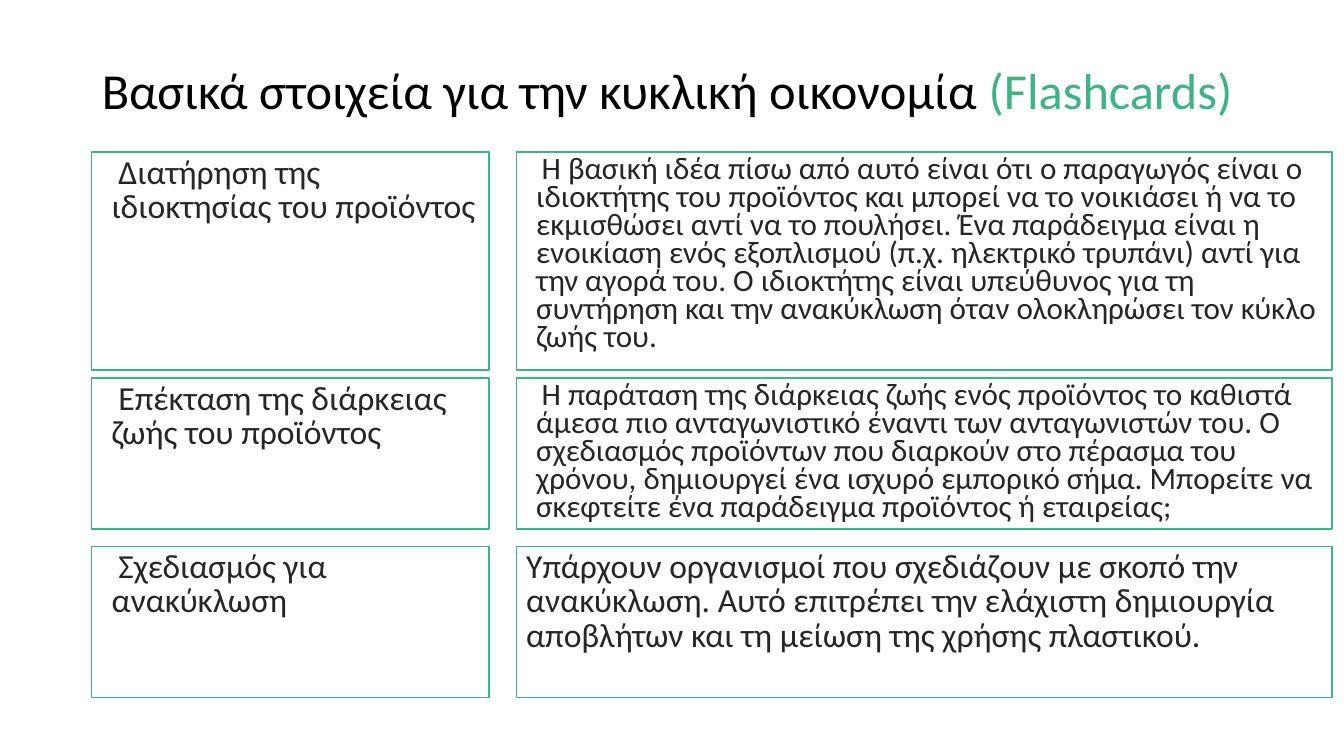
from lxml.etree import SubElement
from pptx import Presentation
from pptx.dml.color import RGBColor
from pptx.enum.shapes import MSO_SHAPE
from pptx.enum.text import MSO_ANCHOR, MSO_AUTO_SIZE, PP_ALIGN
from pptx.oxml.ns import qn
from pptx.util import Inches, Pt

GREEN, BLACK, WHITE, INK = "40B385", "000000", "FFFFFF", "262626"
LEFT = 0.91

# top, height, term, meaning, meaning size, meaning spacing, meaning indented
CARDS = [
    (1.51, 2.16, "Διατήρηση της ιδιοκτησίας του προϊόντος",
     "Η βασική ιδέα πίσω από αυτό είναι ότι ο παραγωγός είναι ο ιδιοκτήτης του "
     "προϊόντος και μπορεί να το νοικιάσει ή να το εκμισθώσει αντί να το πουλήσει. "
     "Ένα παράδειγμα είναι η ενοικίαση ενός εξοπλισμού (π.χ. ηλεκτρικό τρυπάνι) "
     "αντί για την αγορά του. Ο ιδιοκτήτης είναι υπεύθυνος για τη συντήρηση και "
     "την ανακύκλωση όταν ολοκληρώσει τον κύκλο ζωής του.", 22.2, 0.75, True),
    (3.75, 1.5, "Επέκταση της διάρκειας ζωής του προϊόντος",
     "Η παράταση της διάρκειας ζωής ενός προϊόντος το καθιστά άμεσα πιο "
     "ανταγωνιστικό έναντι των ανταγωνιστών του. Ο σχεδιασμός προϊόντων που "
     "διαρκούν στο πέρασμα του χρόνου, δημιουργεί ένα ισχυρό εμπορικό σήμα. "
     "Μπορείτε να σκεφτείτε ένα παράδειγμα προϊόντος ή εταιρείας;", 22.2, 0.75, True),
    (5.42, 1.5, "Σχεδιασμός για ανακύκλωση",
     "Υπάρχουν οργανισμοί που σχεδιάζουν με σκοπό την ανακύκλωση. Αυτό επιτρέπει "
     "την ελάχιστη δημιουργία αποβλήτων και τη μείωση της χρήσης πλαστικού.",
     24, 0.85, False),
]


def color(value):
    return RGBColor.from_string(value)


def indent(par):
    """Hang the paragraph on a blank bullet."""
    props = par._p.get_or_add_pPr()
    props.set("marL", str(Inches(0.1)))
    props.set("indent", str(Inches(-0.17)))
    tint = SubElement(props, qn("a:buClr"))
    SubElement(tint, qn("a:srgbClr"), val=INK)
    SubElement(props, qn("a:buChar"), char=" ")


class Deck:
    face = "Calibri"

    def __init__(self):
        self.prs = Presentation()
        self.prs.slide_width = Inches(13.33)
        self.prs.slide_height = Inches(7.5)
        self.slide = self.prs.slides.add_slide(self.prs.slide_layouts[5])

    def style(self, par, size, spacing):
        par.alignment = PP_ALIGN.LEFT
        par.line_spacing = spacing
        par.font.name = self.face
        par.font.size = Pt(size)

    def title(self, parts):
        """Fill the title with (text, colour) parts."""
        shape = self.slide.shapes.title
        shape.left, shape.top = Inches(LEFT), Inches(0.35)
        shape.width, shape.height = Inches(11.78), Inches(1.16)
        frame = shape.text_frame
        frame.word_wrap = True
        frame.auto_size = MSO_AUTO_SIZE.NONE
        frame.vertical_anchor = MSO_ANCHOR.MIDDLE
        par = frame.paragraphs[0]
        self.style(par, 36, 0.85)
        for text, tint in parts:
            run = par.add_run()
            run.text = text
            run.font.color.rgb = color(tint)

    def card(self, left, top, width, height, text, size=24, spacing=0.85, hung=True):
        box = self.slide.shapes.add_shape(
            MSO_SHAPE.RECTANGLE, Inches(left), Inches(top), Inches(width), Inches(height))
        box.shadow.inherit = False
        box.fill.solid()
        box.fill.fore_color.rgb = color(WHITE)
        box.line.color.rgb = color(GREEN)
        box.line.width = Pt(1)
        frame = box.text_frame
        frame.word_wrap = True
        frame.vertical_anchor = MSO_ANCHOR.TOP
        par = frame.paragraphs[0]
        par.text = text
        if hung:
            indent(par)
        self.style(par, size, spacing)
        par.font.color.rgb = color(INK)


def main():
    deck = Deck()
    deck.title([("Βασικά στοιχεία για την κυκλική οικονομία ", BLACK),
                ("(Flashcards)", GREEN)])
    for top, height, term, text, size, spacing, hung in CARDS:
        deck.card(5.12, top, 8.09, height, text, size, spacing, hung)
        deck.card(LEFT, top, 3.94, height, term)
    deck.prs.save("out.pptx")


if __name__ == "__main__":
    main()
